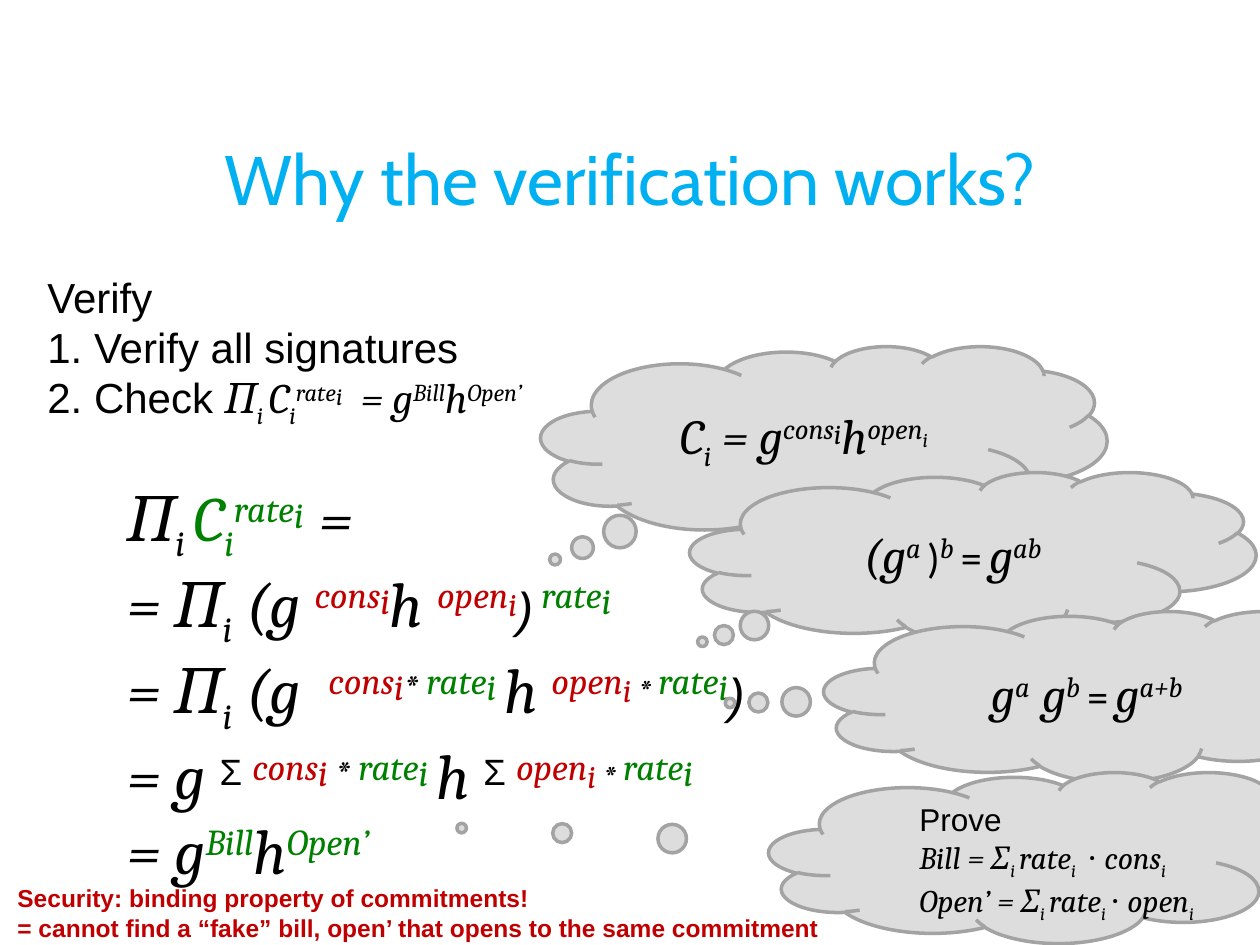
import pptx
import pptx.dml.color
import pptx.enum.shapes
import pptx.enum.text
import pptx.util

BLACK = pptx.dml.color.RGBColor(0x00, 0x00, 0x00)
BLUE = pptx.dml.color.RGBColor(0x00, 0xB0, 0xF0)
GREEN = pptx.dml.color.RGBColor(0x00, 0x80, 0x00)
RED = pptx.dml.color.RGBColor(0xC0, 0x00, 0x00)
WHITE = pptx.dml.color.RGBColor(0xFF, 0xFF, 0xFF)
CLOUD_FILL = pptx.dml.color.RGBColor(0xDD, 0xDD, 0xDD)
CLOUD_LINE = pptx.dml.color.RGBColor(0xA3, 0xA3, 0xA3)

SCALE = pptx.util.Inches(1) / 126
SUB, LOW, SIGMA, SUP = -25, 20, 22, 30
PLAIN = {"name": "Arial", "italic": False}
MATH = {"name": "Cambria", "italic": True}
CALIBRI = {"name": "Calibri", "italic": False}


def px(length):
    """Turn whole px into EMU."""
    return pptx.util.Emu(round(length * SCALE))


def span(text, base=0, color=BLACK, **style):
    """Describe one run of text."""
    return text, base, color, style


def power(word, color=BLACK, index="i", size=None):
    """Describe an exponent with its index."""
    small = {"size": size} if size else {}
    return [span(word, SUP, color), span(index, LOW, color, **small)]


def product(index="i"):
    """Describe a product sign over an index."""
    return [span("Π"), span(index, SUB)]


def equals():
    """Describe the upright equals sign between two spaces."""
    gap = span(" ", 0, WHITE, size=18, **CALIBRI)
    return [gap, span("=", size=24, **CALIBRI), gap]


class SlideBuilder:
    """Hold the current slide and its styles."""

    def __init__(self, deck):
        self.slide = deck.slides.add_slide(deck.slide_layouts[6])

    def fill_text(self, frame, paragraphs, style, align):
        """Fill a text frame with paragraphs of runs."""
        for number, spans in enumerate(paragraphs):
            para = frame.paragraphs[0] if number == 0 else frame.add_paragraph()
            para.alignment = align
            for text, base, color, changes in spans:
                if text == "\n":
                    para.add_line_break()
                    continue
                run = para.add_run()
                run.text = text
                run.font.color.rgb = color
                for key, value in {**style, **changes}.items():
                    setattr(run.font, key, pptx.util.Pt(value) if key == "size" else value)
                if base:
                    run.font._element.set("baseline", str(base * 1000))

    def text(self, place, paragraphs, style, wrap=False, align=pptx.enum.text.PP_ALIGN.LEFT,
             anchor=pptx.enum.text.MSO_ANCHOR.TOP, fit=pptx.enum.text.MSO_AUTO_SIZE.SHAPE_TO_FIT_TEXT):
        """Add a text box."""
        frame = self.slide.shapes.add_textbox(*map(px, place)).text_frame
        for key, value in {"word_wrap": wrap, "auto_size": fit, "vertical_anchor": anchor}.items():
            setattr(frame, key, value)
        self.fill_text(frame, paragraphs, style, align)

    def cloud(self, place, tail, spans=()):
        """Add a thought cloud with its trail of bubbles."""
        shape = self.slide.shapes.add_shape(
            pptx.enum.shapes.MSO_SHAPE.CLOUD_CALLOUT, *map(px, place))
        shape.shadow.inherit = False
        for number, value in enumerate(tail):
            shape.adjustments[number] = value
        shape.fill.solid()
        shape.fill.fore_color.rgb = CLOUD_FILL
        shape.line.color.rgb = CLOUD_LINE
        shape.line.width = pptx.util.Pt(2)
        shape.text_frame.vertical_anchor = pptx.enum.text.MSO_ANCHOR.MIDDLE
        self.fill_text(shape.text_frame, [spans], {**MATH, "size": 28},
                       pptx.enum.text.PP_ALIGN.CENTER)


def main():
    """Build the slide and save it."""
    deck = pptx.Presentation()
    deck.slide_width, deck.slide_height = px(1260), px(945)
    page = SlideBuilder(deck)

    page.text((63, 98, 1134, 158), [[span("Why the verification works?", 0, BLUE)]],
              {"name": "Cabin", "size": 40}, wrap=True,
              align=pptx.enum.text.PP_ALIGN.CENTER,
              anchor=pptx.enum.text.MSO_ANCHOR.MIDDLE,
              fit=pptx.enum.text.MSO_AUTO_SIZE.NONE)

    page.text((35, 265, 556, 165), [
        [span("Verify", **PLAIN), span("\n"), span("1. Verify all signatures", **PLAIN)],
        [span("2. Check ", **PLAIN), *product("i "), span("C"), span("i", SUB), *power("rate"),
         span("  = g"), span("Bill", SUP), span("h"), span("Open’", SUP)],
    ], {**MATH, "size": 24})

    rate = power("rate", GREEN)
    rate_spaced = power("rate", GREEN, "i ")
    close = span(")", size=28, name="Arial")
    sigma = span("Σ ", SIGMA, **PLAIN)
    star = span("* ", LOW, size=32)
    page.text((115, 472, 883, 394), [
        [*product("i "), span("C", 0, GREEN), span("i", SUB, GREEN),
         *power("rate", GREEN, "i  "), span("=")],
        [span("= "), *product(), span(" (g "), *power("cons", RED), span("h "),
         *power("open", RED, size=32), close, span(" ", SUP), *rate],
        [span("= "), *product(), span(" (g  "), *power("cons", RED), span("* ", LOW),
         *rate_spaced, span("h "), *power("open", RED, "i ", 32), star, *rate, close],
        [span("= g "), sigma, *power("cons", RED), span(" * ", LOW), *rate_spaced,
         span("h "), sigma, *power("open", RED, "i ", 32), star, *rate],
        [span("= g"), span("Bill", SUP, GREEN), span("h"), span("Open’", SUP, GREEN)],
    ], {**MATH, "size": 36}, wrap=True)

    page.cloud((541, 346, 566, 195), (-0.475, 0.595),
               [span("C"), span("i", SUB), span(" = g"), *power("cons"), span("h"),
                *power("open", size=20)])
    page.cloud((690, 472, 566, 171), (-0.478, 0.493),
               [span("(g"), span("a ", SUP), span(")", size=24, **CALIBRI), span("b", SUP),
                *equals(), span("g"), span("ab", SUP)])
    page.cloud((824, 611, 566, 171), (-0.666, 0.038),
               [span("g"), span("a  ", SUP), span("g"), span("b", SUP),
                *equals(), span("g"), span("a+b", SUP)])
    page.cloud((769, 772, 566, 171), (-1.043, -0.172))

    page.text((907, 794, 329, 165), [
        [span("Prove", **PLAIN)],
        *[[span(f"{total} = Σ"), span("i ", SUB), span("rate"), span("i ", SUB),
           span(factor), span("i", SUB)]
          for total, factor in (("Bill", " ⋅ cons"), ("Open’", "⋅ open"))],
    ], {**MATH, "size": 18})

    page.text((5, 877, 829, 72), [
        [span("Security: binding property of commitments!", 0, RED)],
        [span("= cannot find a “fake” bill, open’ that opens to the same commitment", 0, RED)],
    ], {"name": "Arial", "size": 14, "bold": True})

    deck.save("out.pptx")


if __name__ == "__main__":
    main()
